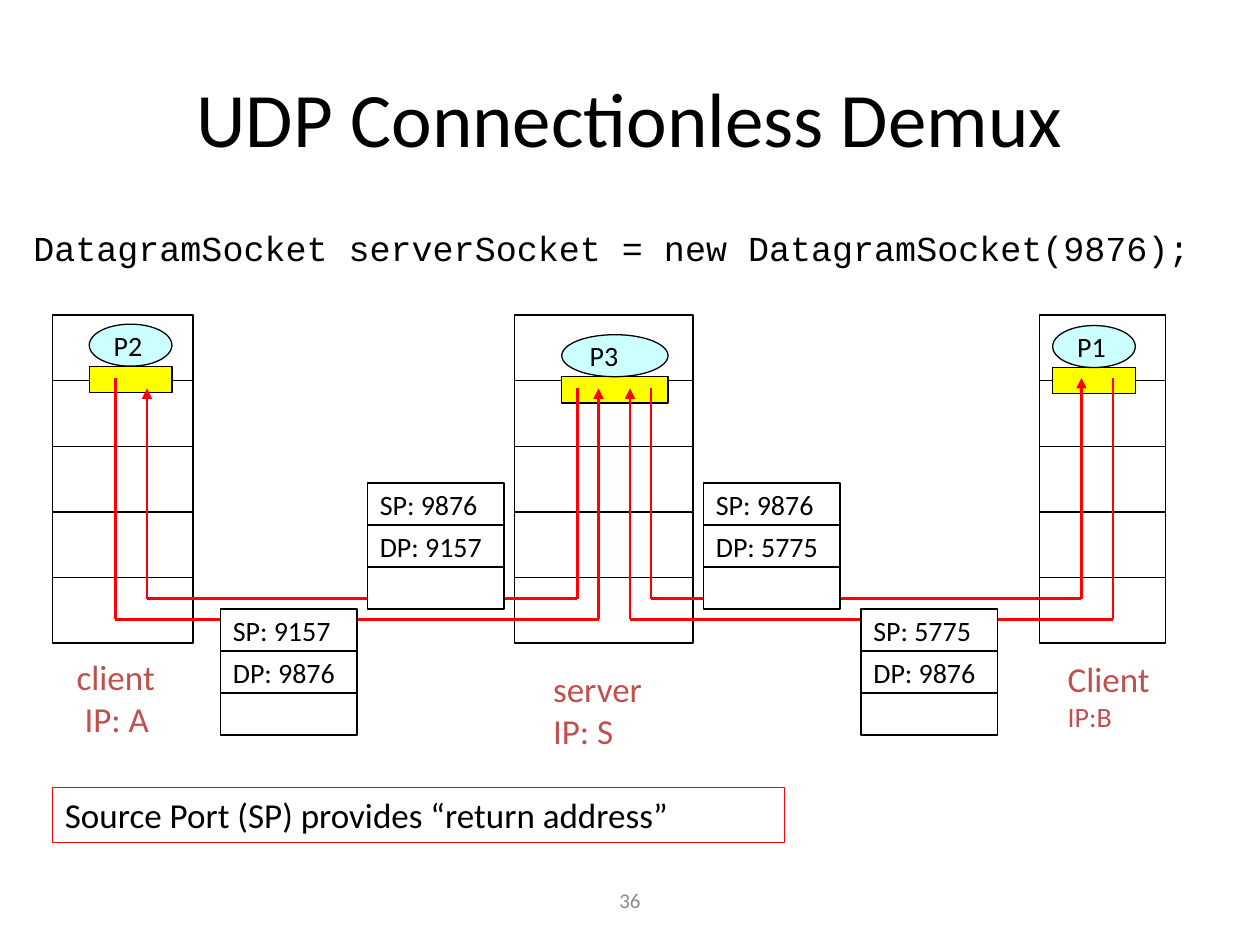
from dataclasses import dataclass
from itertools import pairwise

from lxml import etree
from pptx import Presentation
from pptx.dml.color import RGBColor
from pptx.enum.shapes import MSO_CONNECTOR, MSO_SHAPE
from pptx.enum.text import MSO_ANCHOR, PP_ALIGN
from pptx.oxml.ns import qn
from pptx.util import Emu, Pt

RECTANGLE, ELLIPSE = MSO_SHAPE.RECTANGLE, MSO_SHAPE.OVAL
STRAIGHT = MSO_CONNECTOR.STRAIGHT
TOP, MIDDLE = MSO_ANCHOR.TOP, MSO_ANCHOR.MIDDLE
LEFT, CENTER = PP_ALIGN.LEFT, PP_ALIGN.CENTER
EMU_PER_PX = 9525
TITLE_ONLY = 5

HOST_TOP, LAYER_HEIGHT, LAYER_COUNT = 240, 50, 5
PROCESS_HEIGHT, SOCKET_HEIGHT = 32, 20
SEGMENT_WIDTH, FIELD_HEIGHT = 104, 32
CLIENT_SOCKET_Y, SERVER_SOCKET_Y = 288, 296
REPLY_Y, REQUEST_Y = 456, 472


@dataclass(frozen=True)
class Theme:
    ink: RGBColor = RGBColor(0, 0, 0)
    paper: RGBColor = RGBColor(255, 255, 255)
    process: RGBColor = RGBColor(0xCC, 0xFF, 0xFF)
    socket: RGBColor = RGBColor(0xFF, 0xFF, 0)
    flow: RGBColor = RGBColor(0xFF, 0, 0)
    host_label: RGBColor = RGBColor(0xC0, 0x50, 0x4D)
    page_number: RGBColor = RGBColor(0x8C, 0x8C, 0x8C)
    font: str = "Calibri"
    code_font: str = "Courier New"
    title_size: int = 44
    body_size: int = 20
    small_size: int = 16
    page_size: int = 12
    outline: float = 0.75
    flow_width: float = 1.5


THEME = Theme()


@dataclass(frozen=True)
class Box:
    left: int
    top: int
    width: int
    height: int

    def emu(self) -> list[Emu]:
        return [px(v) for v in (self.left, self.top, self.width, self.height)]


@dataclass(frozen=True)
class Host:
    left: int
    width: int
    process: str
    process_box: Box
    label_box: Box
    label: tuple[str, ...]
    label_sizes: tuple[int, ...] = (THEME.body_size, THEME.body_size)


@dataclass(frozen=True)
class Segment:
    left: int
    top: int
    source_port: int
    destination_port: int


HOSTS = (
    Host(40, 107, "P2", Box(68, 247, 63, PROCESS_HEIGHT),
         Box(49, 495, 91, 74), ("client", " IP: A")),
    Host(792, 96, "P1", Box(802, 248, 63, PROCESS_HEIGHT),
         Box(804, 496, 91, 67), ("Client", "IP:B"),
         (THEME.body_size, THEME.small_size)),
    Host(392, 136, "P3", Box(428, 255, 81, PROCESS_HEIGHT),
         Box(412, 504, 101, 74), ("server", "IP: S")),
)

FLOWS = (
    ((88, CLIENT_SOCKET_Y), (88, REQUEST_Y), (456, REQUEST_Y), (456, SERVER_SOCKET_Y)),
    ((440, SERVER_SOCKET_Y), (440, REPLY_Y), (112, REPLY_Y), (112, SERVER_SOCKET_Y)),
    ((848, CLIENT_SOCKET_Y), (848, REQUEST_Y), (480, REQUEST_Y), (480, SERVER_SOCKET_Y)),
    ((496, SERVER_SOCKET_Y), (496, REPLY_Y), (824, REPLY_Y), (824, CLIENT_SOCKET_Y)),
)

SEGMENTS = (
    Segment(280, 368, 9876, 9157),
    Segment(168, 464, 9157, 9876),
    Segment(536, 368, 9876, 5775),
    Segment(656, 464, 5775, 9876),
)


def px(value: int) -> Emu:
    return Emu(value * EMU_PER_PX)


def write(shape, lines: tuple[str, ...], sizes: tuple[int, ...], color=THEME.ink,
          font: str = THEME.font, align=LEFT, anchor=TOP, wrap: bool = False):
    frame = shape.text_frame
    frame.word_wrap = wrap
    frame.vertical_anchor = anchor
    frame.text = "\n".join(lines)
    for paragraph, size in zip(frame.paragraphs, sizes):
        paragraph.alignment = align
        paragraph.font.name = font
        paragraph.font.size = Pt(size)
        paragraph.font.color.rgb = color
    return frame


def add_text(slide, box: Box, lines: tuple[str, ...], sizes: tuple[int, ...], **style):
    return write(slide.shapes.add_textbox(*box.emu()), lines, sizes, **style)


def add_block(slide, box: Box, fill=THEME.paper, kind=RECTANGLE, line=THEME.ink):
    block = slide.shapes.add_shape(kind, *box.emu())
    block.shadow.inherit = False
    if fill is None:
        block.fill.background()
    else:
        block.fill.solid()
        block.fill.fore_color.rgb = fill
    block.line.color.rgb = line
    block.line.width = Pt(THEME.outline)
    return block


def add_host(slide, host: Host) -> None:
    for layer in range(LAYER_COUNT):
        top = HOST_TOP + layer * LAYER_HEIGHT
        add_block(slide, Box(host.left, top, host.width, LAYER_HEIGHT))
    bubble = host.process_box
    add_block(slide, Box(bubble.left, bubble.top + bubble.height, bubble.width,
                         SOCKET_HEIGHT), THEME.socket)
    process = add_block(slide, bubble, THEME.process, ELLIPSE)
    write(process, (host.process,), (THEME.small_size,), anchor=MIDDLE)
    add_text(slide, host.label_box, host.label, host.label_sizes, color=THEME.host_label)


def add_flow(slide, route: tuple[tuple[int, int], ...]) -> None:
    for start, end in pairwise(route):
        leg = slide.shapes.add_connector(STRAIGHT, *map(px, start + end))
        leg.line.color.rgb = THEME.flow
        leg.line.width = Pt(THEME.flow_width)
        if end == route[-1]:
            etree.SubElement(leg.line._get_or_add_ln(), qn("a:tailEnd"), type="triangle")
        etree.SubElement(leg._element.spPr, qn("a:effectLst"))


def add_segment(slide, segment: Segment) -> None:
    fields = (f"SP: {segment.source_port}", f"DP: {segment.destination_port}", "")
    for row, field in enumerate(fields):
        cell = add_block(slide, Box(segment.left, segment.top + row * FIELD_HEIGHT,
                                    SEGMENT_WIDTH, FIELD_HEIGHT))
        if field:
            write(cell, (field,), (THEME.small_size,), anchor=MIDDLE)


def main() -> None:
    deck = Presentation()
    deck.slide_width, deck.slide_height = px(960), px(720)
    slide = deck.slides.add_slide(deck.slide_layouts[TITLE_ONLY])

    title = slide.shapes.title
    title.left, title.top, title.width, title.height = Box(48, 29, 864, 120).emu()
    write(title, ("UDP Connectionless Demux",), (THEME.title_size,),
          align=CENTER, anchor=MIDDLE, wrap=True)

    code = add_text(slide, Box(16, 168, 912, 64),
                    ("DatagramSocket serverSocket = new DatagramSocket(9876);",),
                    (THEME.body_size,), font=THEME.code_font, wrap=True)
    code.paragraphs[0].space_before = Pt(4)

    for host in HOSTS:
        add_host(slide, host)
    for route in FLOWS:
        add_flow(slide, route)
    for segment in SEGMENTS:
        add_segment(slide, segment)

    takeaway = add_block(slide, Box(40, 600, 558, 42), None, line=THEME.flow)
    write(takeaway, ("Source Port (SP) provides “return address”",), (THEME.body_size,))
    add_text(slide, Box(328, 667, 304, 38), ("36",), (THEME.page_size,),
             color=THEME.page_number, align=CENTER, anchor=MIDDLE, wrap=True)

    deck.save("out.pptx")


if __name__ == "__main__":
    main()
